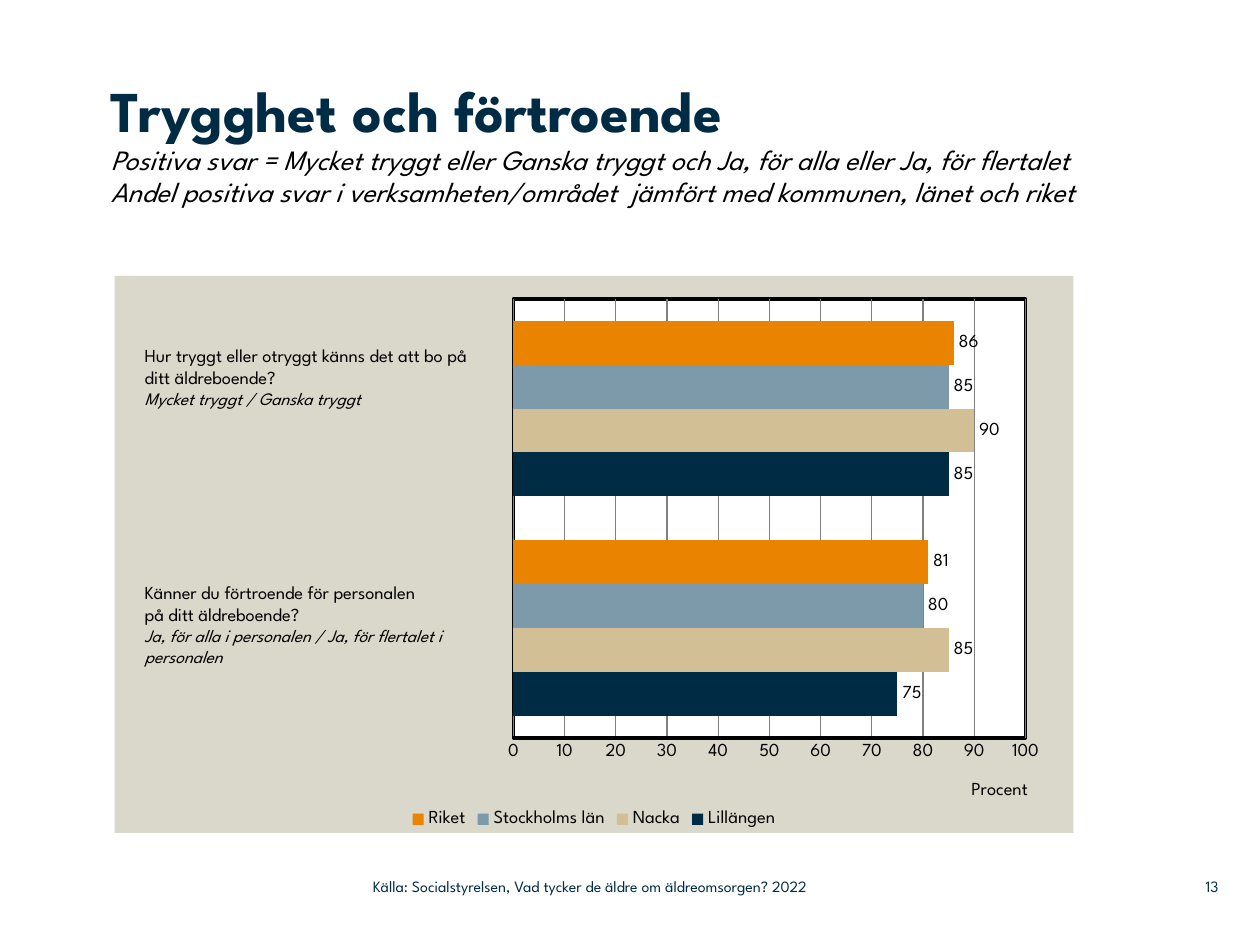
from dataclasses import dataclass

from lxml import etree
from pptx import Presentation
from pptx.chart.data import CategoryChartData
from pptx.dml.color import RGBColor
from pptx.enum.chart import XL_CHART_TYPE, XL_LABEL_POSITION, XL_LEGEND_POSITION, XL_TICK_MARK
from pptx.enum.text import MSO_ANCHOR, PP_ALIGN
from pptx.oxml import parse_xml
from pptx.oxml.ns import nsdecls, qn
from pptx.util import Inches, Pt

BAR_CLUSTERED = XL_CHART_TYPE.BAR_CLUSTERED
OUTSIDE_END = XL_LABEL_POSITION.OUTSIDE_END
LEGEND_BOTTOM = XL_LEGEND_POSITION.BOTTOM
NO_TICKS = XL_TICK_MARK.NONE
TOP, MIDDLE = MSO_ANCHOR.TOP, MSO_ANCHOR.MIDDLE
LEFT, RIGHT = PP_ALIGN.LEFT, PP_ALIGN.RIGHT

FONT = "League Spartan"
NAVY = RGBColor(0x00, 0x2B, 0x45)
SAND = RGBColor(0xD3, 0xBF, 0x96)
STEEL = RGBColor(0x7D, 0x9A, 0xAA)
ORANGE = RGBColor(0xE9, 0x83, 0x00)
PANEL = RGBColor(0xDA, 0xD7, 0xCB)
GRID = RGBColor(0x80, 0x80, 0x80)
WHITE = RGBColor(0xFF, 0xFF, 0xFF)
BLACK = RGBColor(0x00, 0x00, 0x00)


@dataclass
class Series:
    name: str
    values: tuple
    color: RGBColor


@dataclass
class Question:
    box: tuple
    lines: list
    answers: str


@dataclass
class Footer:
    box: tuple
    text: str
    alignment: PP_ALIGN


SERIES = [
    Series("Lillängen", (75, 85), NAVY),
    Series("Nacka", (85, 90), SAND),
    Series("Stockholms län", (80, 85), STEEL),
    Series("Riket", (81, 86), ORANGE),
]
QUESTIONS = [
    Question((1.05, 2.68, 2.98, 0.81),
             ["Hur tryggt eller otryggt känns det att bo på ditt äldreboende?"],
             "Mycket tryggt / Ganska tryggt"),
    Question((1.05, 4.56, 3, 0.98),
             ["Känner du förtroende för personalen", "på ditt äldreboende?"],
             "Ja, för alla i personalen / Ja, för flertalet i personalen"),
]
FOOTERS = [
    Footer((2.96, 6.89, 4.43, 0.29),
           "Källa: Socialstyrelsen, Vad tycker de äldre om äldreomsorgen? 2022", LEFT),
    Footer((9.2, 6.89, 0.47, 0.29), "13", RIGHT),
]
TITLE_LINES = [
    "Trygghet och förtroende",
    "Positiva svar = Mycket tryggt eller Ganska tryggt och Ja, för alla eller Ja, för flertalet",
    "Andel positiva svar i verksamheten/området  jämfört med kommunen, länet och riket",
]


def style_font(font, size: float, color: RGBColor, bold: bool = False, italic: bool = False) -> None:
    font.name = FONT
    font.size = Pt(size)
    font.bold = bold
    font.italic = italic
    font.color.rgb = color


def clear_margins(text_frame) -> None:
    text_frame.margin_left = text_frame.margin_right = 0
    text_frame.margin_top = text_frame.margin_bottom = 0


def add_text_box(slide, box: tuple, text: str):
    shape = slide.shapes.add_textbox(*map(Inches, box))
    shape.text_frame.word_wrap = True
    shape.text_frame.text = text
    return shape.text_frame


def add_title(slide) -> None:
    title = slide.shapes.title
    title.left, title.top, title.width, title.height = map(Inches, (0.88, 0.55, 7.75, 1.64))
    text_frame = title.text_frame
    clear_margins(text_frame)
    text_frame.margin_top = Inches(0.08)
    text_frame.vertical_anchor = TOP
    text_frame.word_wrap = True
    paragraph = text_frame.paragraphs[0]
    paragraph.text = "\v".join(TITLE_LINES)
    paragraph.alignment = LEFT
    paragraph.line_spacing = 0.95
    heading, *subtitles = paragraph.runs
    style_font(heading.font, 33, NAVY, bold=True)
    for run in subtitles:
        style_font(run.font, 16, BLACK, italic=True)


def add_question(slide, question: Question) -> None:
    text_frame = add_text_box(slide, question.box, "\n".join(question.lines + [question.answers]))
    *wording, answers = text_frame.paragraphs
    for paragraph in wording:
        style_font(paragraph.runs[0].font, 10.5, BLACK)
    style_font(answers.runs[0].font, 10, BLACK, italic=True)


def add_footer(slide, footer: Footer) -> None:
    text_frame = add_text_box(slide, footer.box, footer.text)
    clear_margins(text_frame)
    text_frame.vertical_anchor = MIDDLE
    paragraph = text_frame.paragraphs[0]
    paragraph.alignment = footer.alignment
    style_font(paragraph.runs[0].font, 9, NAVY)


def set_layout(parent, index: int, target: str = "", **fractions: float) -> None:
    """Place a chart part by fractions of the chart area."""
    for old_layout in parent.findall(qn("c:layout")):
        parent.remove(old_layout)
    layout = etree.Element(qn("c:layout"))
    manual = etree.SubElement(layout, qn("c:manualLayout"))
    settings = {"layoutTarget": target} if target else {}
    settings.update(xMode="edge", yMode="edge", **fractions)
    for name, value in settings.items():
        etree.SubElement(manual, qn(f"c:{name}")).set("val", str(value))
    parent.insert(index, layout)


def area_format(fill: RGBColor, line: str):
    return parse_xml(
        f'<c:spPr {nsdecls("c", "a")}><a:solidFill><a:srgbClr val="{fill}"/></a:solidFill>'
        f"{line}</c:spPr>")


def add_bar_chart(slide) -> None:
    data = CategoryChartData()
    data.categories = ["1", "2"]
    for item in SERIES:
        data.add_series(item.name, item.values)
    chart = slide.shapes.add_chart(BAR_CLUSTERED, *map(Inches, (0.91, 2.19, 7.61, 4.42)), data).chart
    chart.has_title = False
    style_font(chart.font, 10.5, BLACK)

    # Bars and value labels
    plot = chart.plots[0]
    plot.gap_width = 100
    plot.overlap = 0
    plot.vary_by_categories = False
    for series, item in zip(plot.series, SERIES):
        series.format.fill.solid()
        series.format.fill.fore_color.rgb = item.color
        labels = series.data_labels
        labels.show_value = True
        labels.position = OUTSIDE_END
        style_font(labels.font, 10.5, BLACK)

    # Axes
    chart.category_axis.visible = False
    axis = chart.value_axis
    axis.minimum_scale, axis.maximum_scale, axis.major_unit = 0, 100, 10
    axis.major_tick_mark = axis.minor_tick_mark = NO_TICKS
    axis.format.line.color.rgb = BLACK
    axis.format.line.width = Pt(2)
    axis.has_major_gridlines = True
    axis.major_gridlines.format.line.color.rgb = GRID
    axis.major_gridlines.format.line.width = Pt(0.75)
    style_font(axis.tick_labels.font, 10.5, BLACK)
    axis_title = axis.axis_title
    axis_title.text_frame.text = "Procent"
    style_font(axis_title.text_frame.paragraphs[0].runs[0].font, 10.5, BLACK)

    # Legend
    chart.has_legend = True
    chart.legend.position = LEGEND_BOTTOM
    chart.legend.include_in_layout = False
    style_font(chart.legend.font, 10.5, BLACK)

    # Layout and backgrounds
    set_layout(axis_title._element, 1, x=0.89, y=0.9)
    plot_area = chart._chartSpace.chart.plotArea
    set_layout(plot_area, 0, "inner", x=0.416, y=0.041, w=0.534, h=0.789)
    border = f'<a:ln w="{Pt(2)}"><a:solidFill><a:srgbClr val="{BLACK}"/></a:solidFill></a:ln>'
    plot_area.append(area_format(WHITE, border))
    chart._chartSpace.chart.addnext(area_format(PANEL, "<a:ln><a:noFill/></a:ln>"))


def main() -> None:
    presentation = Presentation()
    presentation.slide_width, presentation.slide_height = Inches(10), Inches(7.5)
    slide = presentation.slides.add_slide(presentation.slide_layouts[5])
    add_title(slide)
    add_bar_chart(slide)
    for question in QUESTIONS:
        add_question(slide, question)
    for footer in FOOTERS:
        add_footer(slide, footer)
    presentation.save("out.pptx")


if __name__ == "__main__":
    main()
